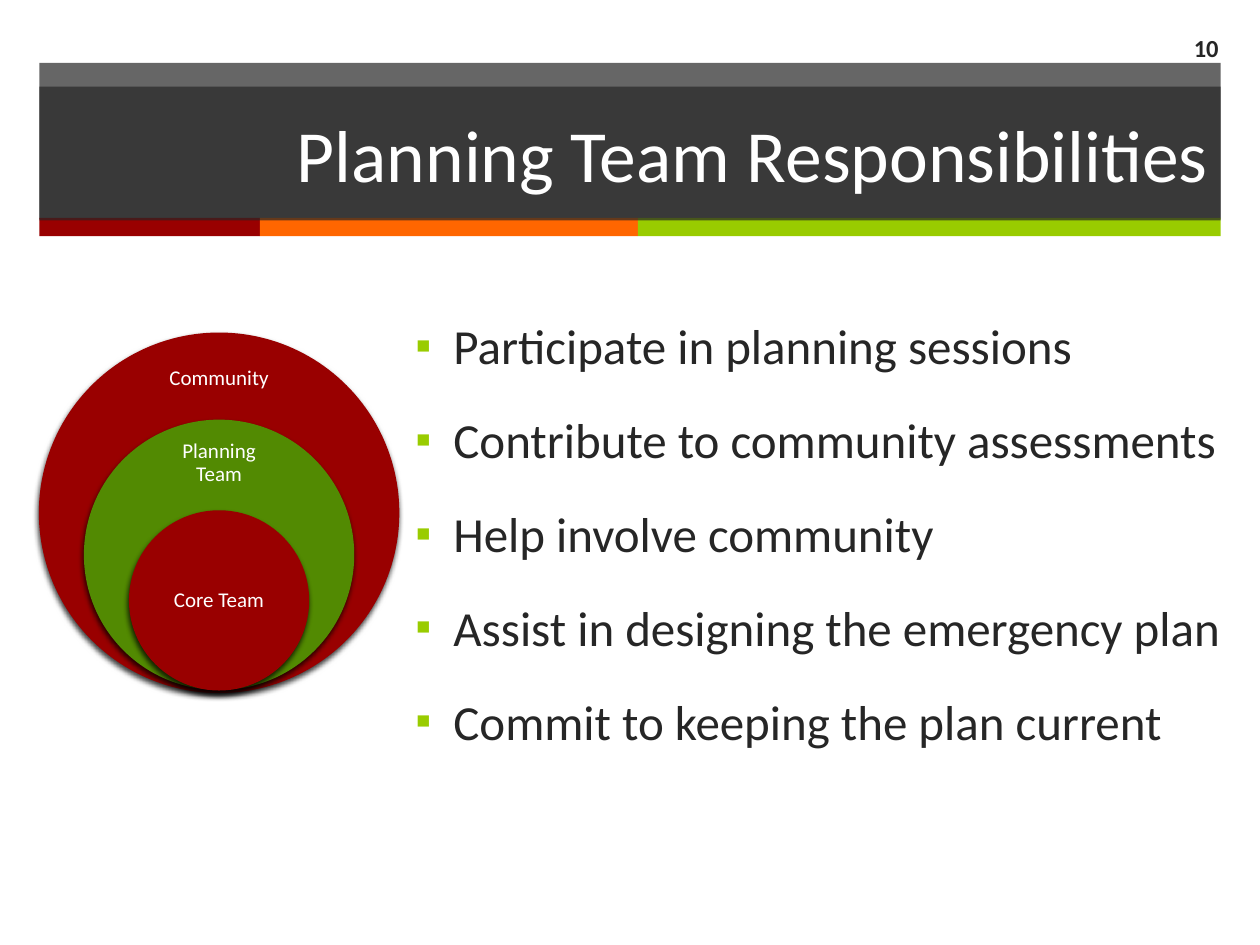
from lxml.etree import SubElement
from pptx import Presentation
from pptx.dml.color import RGBColor
from pptx.enum.shapes import MSO_SHAPE
from pptx.enum.text import MSO_ANCHOR, PP_ALIGN
from pptx.oxml.ns import qn
from pptx.util import Pt

DARK, WHITE = "262626", "FFFFFF"
RED, ORANGE, LIME, GREEN = "990000", "FF6600", "99CC00", "528A02"


def rgb(value):
    return RGBColor.from_string(value)


def add_xml(parent, tag, **attrs):
    return SubElement(parent, qn(tag), {k: str(v) for k, v in attrs.items()})


class SlideBuilder:
    """Holds the font and the current slide, and draws each kind of element."""

    font = "Calibri"

    def __init__(self, slide):
        self.s = slide

    def shape(self, kind, left, top, width, height, color, opacity=100):
        sp = self.s.shapes.add_shape(kind, Pt(left), Pt(top), Pt(width), Pt(height))
        sp.shadow.inherit = False
        sp.fill.solid()
        sp.fill.fore_color.rgb = rgb(color)
        sp.line.fill.background()
        if opacity < 100:
            clr = sp._element.spPr.find(qn("a:solidFill"))[0]
            add_xml(clr, "a:alpha", val=opacity * 1000)
        return sp

    def bar(self, left, top, width, height, color, opacity=100):
        return self.shape(MSO_SHAPE.RECTANGLE, left, top, width, height, color, opacity)

    def circle(self, center, top, size, color):
        """Draws a circle with a soft shadow below it."""
        sp = self.shape(MSO_SHAPE.OVAL, center - size / 2, top, size, size, color)
        effects = sp._element.spPr.find(qn("a:effectLst"))
        shadow = add_xml(effects, "a:outerShdw", blurRad=Pt(3), dist=Pt(2),
                         dir=110 * 60000, rotWithShape=0)
        clr = add_xml(shadow, "a:srgbClr", val="000000")
        add_xml(clr, "a:alpha", val=75000)

    def set_text(self, sp, lines, size, color, align, anchor=MSO_ANCHOR.MIDDLE, bold=False):
        tf = sp.text_frame
        tf.word_wrap = True
        tf.vertical_anchor = anchor
        tf.text = "\n".join(lines)
        for p in tf.paragraphs:
            p.alignment = align
            for r in p.runs:
                r.font.name, r.font.size, r.font.bold = self.font, Pt(size), bold
                r.font.color.rgb = rgb(color)
        return tf

    def text(self, left, top, width, height, lines, *style, **options):
        sp = self.s.shapes.add_textbox(Pt(left), Pt(top), Pt(width), Pt(height))
        return self.set_text(sp, lines, *style, **options)

    def label(self, center, top, width, height, text):
        tf = self.text(center - width / 2, top, width, height, [text],
                       12, WHITE, PP_ALIGN.CENTER)
        tf.margin_left = tf.margin_right = tf.margin_top = tf.margin_bottom = Pt(6.5)
        tf.paragraphs[0].line_spacing = 0.9

    def bullets(self, left, top, width, height, lines):
        tf = self.text(left, top, width, height, lines, 28, DARK,
                       PP_ALIGN.LEFT, anchor=MSO_ANCHOR.TOP)
        for p in tf.paragraphs:
            p.space_before = Pt(20)
            pPr = p._p.get_or_add_pPr()
            pPr.set("marL", str(Pt(36)))
            pPr.set("indent", str(Pt(-21.6)))
            add_xml(add_xml(pPr, "a:buClr"), "a:srgbClr", val=LIME)
            add_xml(pPr, "a:buSzPct", val=90000)
            add_xml(pPr, "a:buFont", typeface=self.font)
            add_xml(pPr, "a:buChar", char="▪")


def main():
    prs = Presentation()
    prs.slide_width, prs.slide_height = Pt(720), Pt(540)
    b = SlideBuilder(prs.slides.add_slide(prs.slide_layouts[6]))

    left, width = 22.5, 675
    b.bar(left, 36, width, 89, DARK, 70)
    x = left
    for stripe, color in ((126, RED), (216, ORANGE), (333, LIME)):
        b.bar(x, 124.5, stripe, 10.5, color)
        x += stripe
    title = b.bar(left, 49.5, width, 76.5, DARK, 70)
    b.set_text(title, ["Planning Team Responsibilities"], 42, WHITE, PP_ALIGN.RIGHT)

    center, diameter = 125.2, 206
    rings = (
        ("Community", 1, 190, RED, 201, 31),
        ("Planning Team", 0.75, 239.8, GREEN, 250, 29),
        ("Core Team", 0.5, 291.6, RED, 317.5, 51),
    )
    for name, scale, top, color, label_top, label_height in rings:
        b.circle(center, top, diameter * scale, color)
        b.label(center, label_top, 72.5, label_height, name)

    b.text(653.5, 13, 50, 28, ["10"], 14, DARK, PP_ALIGN.RIGHT, bold=True)
    b.bullets(216, 177, 495, 302, [
        "Participate in planning sessions",
        "Contribute to community assessments",
        "Help involve community",
        "Assist in designing the emergency plan",
        "Commit to keeping the plan current",
    ])
    prs.save("out.pptx")


if __name__ == "__main__":
    main()
